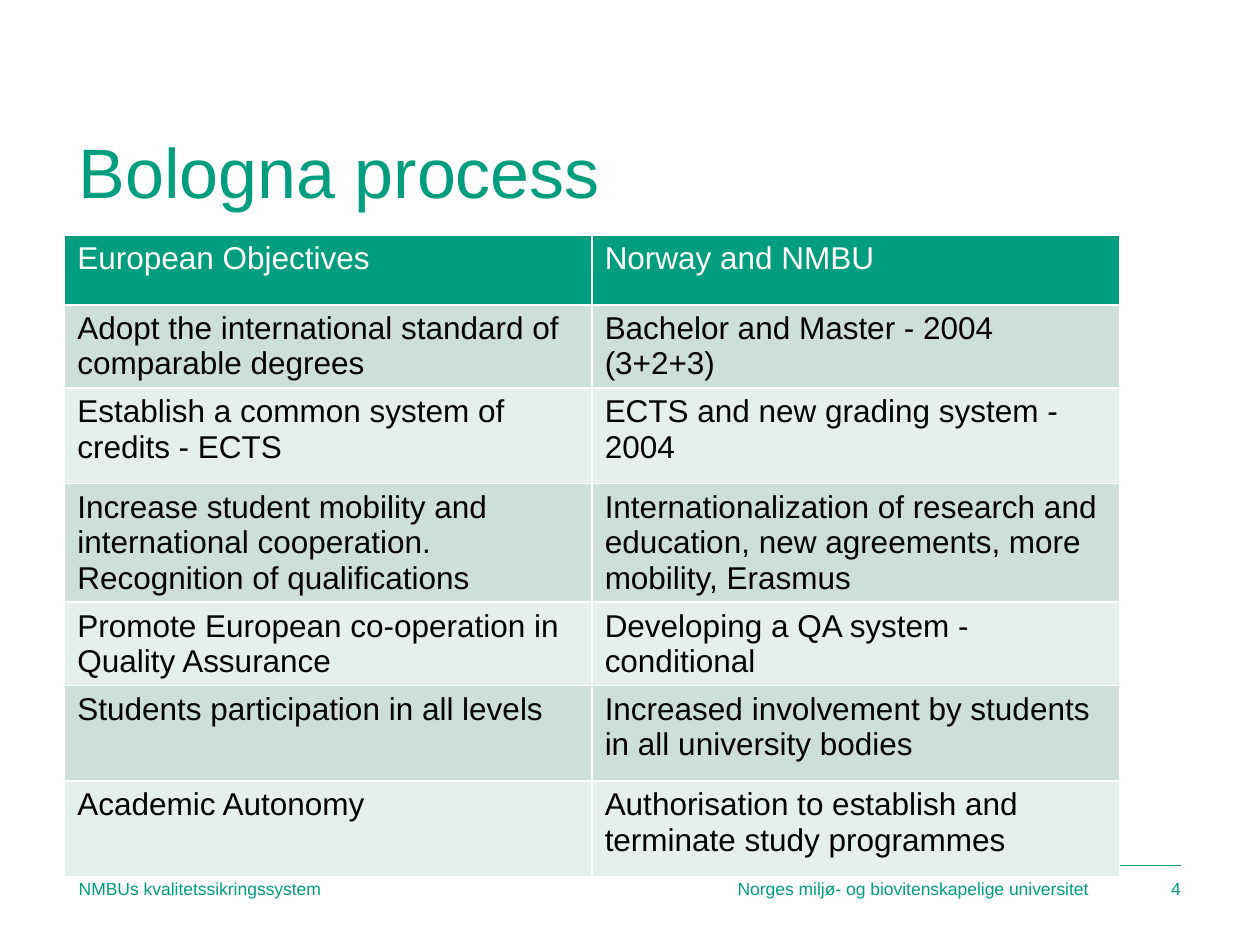
from dataclasses import dataclass

import pptx
import pptx.dml.color
import pptx.enum.shapes
import pptx.enum.text
import pptx.oxml
import pptx.oxml.ns
import pptx.util
from lxml import etree

Pt = pptx.util.Pt
ALIGN = pptx.enum.text.PP_ALIGN
ANCHOR = pptx.enum.text.MSO_ANCHOR


@dataclass(frozen=True)
class Theme:
    font: str = "Arial"
    green: str = "009D7F"
    white: str = "FFFFFF"
    black: str = "000000"
    bands: tuple = ("CCDFD8", "E7EFEC")
    title_size: int = 40
    table_size: int = 18
    footer_size: int = 10


THEME = Theme()

TABLE_ROWS = [
    ("European Objectives", "Norway and NMBU"),
    ("Adopt the international standard of comparable degrees",
     "Bachelor and Master - 2004\n(3+2+3)"),
    ("Establish a common system of credits - ECTS",
     "ECTS and new grading system - 2004"),
    ("Increase student mobility and international cooperation.\n"
     "Recognition of qualifications",
     "Internationalization of research and education, new agreements, "
     "more mobility, Erasmus"),
    ("Promote European co-operation in Quality Assurance",
     "Developing a QA system - conditional"),
    ("Students participation in all levels",
     "Increased involvement by students in all university bodies"),
    ("Academic Autonomy",
     "Authorisation to establish and terminate study programmes"),
]
LOW_ROW, HIGH_ROW = 40, 54.7
ROW_HEIGHTS = [LOW_ROW, LOW_ROW, HIGH_ROW, HIGH_ROW, LOW_ROW, HIGH_ROW, HIGH_ROW]
COLUMN_WIDTH = 301.4


def rgb(color):
    return pptx.dml.color.RGBColor.from_string(color)


def write_text(text_frame, text, size, color, alignment=ALIGN.LEFT):
    text_frame.text = text
    for paragraph in text_frame.paragraphs:
        paragraph.alignment = alignment
        for run in paragraph.runs:
            run.font.name = THEME.font
            run.font.size = Pt(size)
            run.font.color.rgb = rgb(color)


def remove_margins(text_frame, anchor):
    text_frame.word_wrap = True
    text_frame.auto_size = pptx.enum.text.MSO_AUTO_SIZE.NONE
    text_frame.vertical_anchor = anchor
    text_frame.margin_left = text_frame.margin_right = 0
    text_frame.margin_top = text_frame.margin_bottom = 0


def add_title(slide, text):
    title = slide.shapes.title
    title.left, title.top, title.width, title.height = Pt(45), Pt(73.4), Pt(537), Pt(48.2)
    remove_margins(title.text_frame, ANCHOR.BOTTOM)
    write_text(title.text_frame, text, THEME.title_size, THEME.green)


def add_footer_text(slide, text, left, width, alignment=ALIGN.LEFT):
    box = slide.shapes.add_textbox(Pt(left), Pt(501.8), Pt(width), Pt(12.2))
    remove_margins(box.text_frame, ANCHOR.MIDDLE)
    write_text(box.text_frame, text, THEME.footer_size, THEME.green, alignment)


def add_footer_rule(slide):
    rule = slide.shapes.add_connector(
        pptx.enum.shapes.MSO_CONNECTOR.STRAIGHT, Pt(45), Pt(494.6), Pt(675), Pt(494.6))
    rule.line.color.rgb = rgb(THEME.green)
    rule.line.width = Pt(1)
    etree.SubElement(rule._element.spPr, pptx.oxml.ns.qn("a:effectLst"))


def set_borders(cell, color, width):
    properties = cell._tc.get_or_add_tcPr()
    for side in ("lnL", "lnR", "lnT", "lnB"):
        properties.append(pptx.oxml.parse_xml(
            f'<a:{side} {pptx.oxml.ns.nsdecls("a")} w="{Pt(width)}">'
            f'<a:solidFill><a:srgbClr val="{color}"/></a:solidFill></a:{side}>'))


def add_objectives_table(slide):
    table = slide.shapes.add_table(
        len(TABLE_ROWS), 2, Pt(37), Pt(134.2),
        Pt(2 * COLUMN_WIDTH), Pt(sum(ROW_HEIGHTS))).table
    for column in table.columns:
        column.width = Pt(COLUMN_WIDTH)
    for row_index, texts in enumerate(TABLE_ROWS):
        table.rows[row_index].height = Pt(ROW_HEIGHTS[row_index])
        is_header = row_index == 0
        fill = THEME.green if is_header else THEME.bands[(row_index - 1) % 2]
        color = THEME.white if is_header else THEME.black
        for column_index, text in enumerate(texts):
            cell = table.cell(row_index, column_index)
            set_borders(cell, THEME.white, 1)
            cell.fill.solid()
            cell.fill.fore_color.rgb = rgb(fill)
            write_text(cell.text_frame, text, THEME.table_size, color)
            for run in (run for paragraph in cell.text_frame.paragraphs
                        for run in paragraph.runs):
                run.font.bold = False


def main():
    presentation = pptx.Presentation()
    presentation.slide_width, presentation.slide_height = Pt(720), Pt(540)
    slide = presentation.slides.add_slide(
        presentation.slide_layouts.get_by_name("Title Only"))
    add_footer_rule(slide)
    add_title(slide, "Bologna process")
    add_footer_text(slide, "Norges miljø- og biovitenskapelige universitet", 421.5, 227.5)
    add_footer_text(slide, "NMBUs kvalitetssikringssystem", 45, 374.4)
    add_footer_text(slide, "4", 651, 23.8, ALIGN.RIGHT)
    add_objectives_table(slide)
    presentation.save("out.pptx")


if __name__ == "__main__":
    main()
